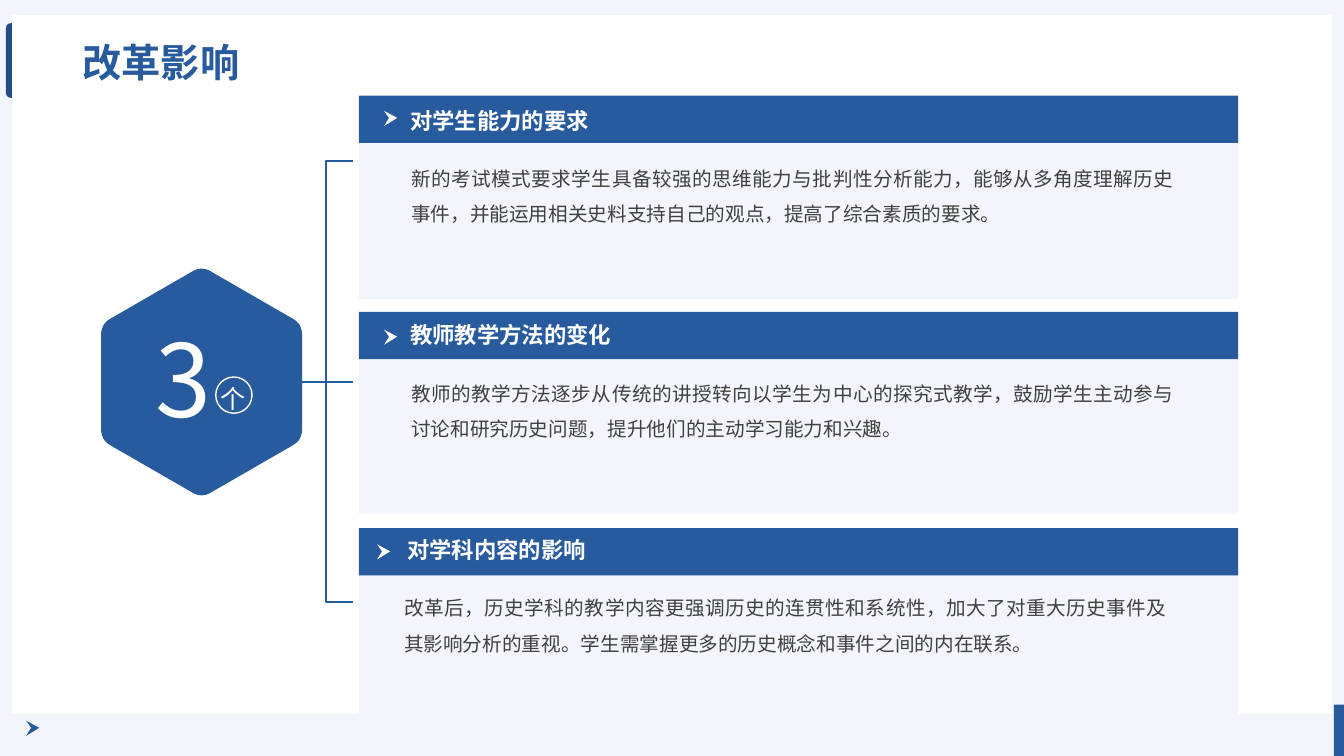
"""Build the reform impact slide: a hexagon bracketed to three text cards."""
from math import cos, pi, sin

from lxml import etree
from pptx import Presentation
from pptx import util as u
from pptx.dml.color import RGBColor
from pptx.enum import shapes, text
from pptx.oxml.ns import qn

COLORS = {"blue": "285B9E", "navy": "224C84", "pale": "F2F5FB", "white": "FFFFFF", "grey": "404040"}
RGB = {name: RGBColor.from_string(value) for name, value in COLORS.items()}
FONT = "Noto Sans CJK SC"
KIND = shapes.MSO_SHAPE
ALIGN = text.PP_ALIGN

prs = Presentation()
prs.slide_width, prs.slide_height = u.Inches(13.33), u.Inches(7.5)
s = prs.slides.add_slide(prs.slide_layouts[5])
s.background.fill.solid()
s.background.fill.fore_color.rgb = RGB["pale"]


def add_shape(shape, fill=None, line=None, width=1):
    """Add a preset (kind, left, top, width, height) or an outline of points."""
    if isinstance(shape, tuple):
        sp = s.shapes.add_shape(shape[0], *[u.Inches(v) for v in shape[1:]])
    else:
        points = [(x * 1000, y * 1000) for x, y in shape]
        builder = s.shapes.build_freeform(*points[0], scale=914.4)
        builder.add_line_segments(points[1:], close=True)
        sp = builder.convert_to_shape()
    sp.shadow.inherit = False
    if fill:
        sp.fill.solid()
        sp.fill.fore_color.rgb = RGB[fill]
    else:
        sp.fill.background()
    if line:
        sp.line.color.rgb = RGB[line]
        sp.line.width = u.Pt(width)
    else:
        sp.line.fill.background()
    return sp


def add_text(words, box, size, color, bold=False, align=ALIGN.LEFT, spacing=None, wrap=True, sp=None):
    """Write words in a new text box, or in the placeholder given as sp."""
    lengths = [u.Inches(v) for v in box]
    sp = sp or s.shapes.add_textbox(*lengths)
    sp.left, sp.top, sp.width, sp.height = lengths
    tf = sp.text_frame
    tf.text = words
    tf.word_wrap = wrap
    tf.auto_size = text.MSO_AUTO_SIZE.NONE
    tf.vertical_anchor = text.MSO_ANCHOR.TOP
    p = tf.paragraphs[0]
    p.alignment = align
    if spacing:
        p.line_spacing = spacing
    font = p.runs[0].font
    font.name, font.size, font.bold = FONT, u.Pt(size), bold
    font.color.rgb = RGB[color]
    etree.SubElement(p.runs[0]._r.get_or_add_rPr(), qn("a:ea"), typeface=FONT)


tab = add_shape((KIND.ROUND_2_SAME_RECTANGLE, -0.21, 0.5, 0.74, 0.2), "navy")
tab.rotation = 270
tab.adjustments[0] = 0.23
add_shape((KIND.RECTANGLE, 13.23, 6.99, 0.1, 0.51), "blue")
add_shape((KIND.RECTANGLE, 0.12, 0.15, 13.09, 6.93), "white")

cx, cy, radius, cut, steps = 2, 3.79, 1.15, 0.09, 8
corners = [(cx + radius * sin(k * pi / 3), cy - radius * cos(k * pi / 3)) for k in range(6)]
outline = []
for k, corner in enumerate(corners):
    before, after = corners[k - 1], corners[(k + 1) % 6]
    for step in range(steps + 1):
        t = step / steps
        outline.append([c + cut * ((1 - t) ** 2 * (b - c) + t ** 2 * (a - c))
                        for c, b, a in zip(corner, before, after)])
add_shape(outline, "blue")
add_text("3", (1.42, 3.09, 0.79, 1.31), 72, "white", align=ALIGN.CENTER, wrap=False)
add_text("个", (2.09, 3.75, 0.45, 0.4), 18, "white", align=ALIGN.CENTER, wrap=False)
add_shape((KIND.OVAL, 2.14, 3.74, 0.36, 0.36), line="white")

stem = s.shapes.add_connector(shapes.MSO_CONNECTOR.STRAIGHT, *[u.Inches(v) for v in (2.99, cy, 3.5, cy)])
stem.line.color.rgb = RGB["blue"]
stem.line.width = u.Pt(1.5)
etree.SubElement(stem._element.spPr, qn("a:effectLst"))
bracket = add_shape((KIND.LEFT_BRACKET, 3.23, 1.6, 0.27, 4.37), line="blue", width=1.5)
bracket.adjustments[0] = 0

add_text("改革影响", (0.72, 0.33, 11.84, 0.57), 28, "blue", bold=True, sp=s.shapes.title)
title = s.shapes.title.element
title.getparent().append(title)

left, top, width, band, pitch, text_pitch = 3.56, 0.95, 8.72, 0.47, 2.145, 2.13
cards = [
    ("对学生能力的要求", 1.55, 3.97, 3.98, (3.81, 1.17),
     "新的考试模式要求学生具备较强的思维能力与批判性分析能力，能够从多角度理解历史事件，并能运用相关史料支持自己的观点，提高了综合素质的要求。"),
    ("教师教学方法的变化", 1.53, 3.97, 3.98, (3.81, 3.34),
     "教师的教学方法逐步从传统的讲授转向以学生为中心的探究式教学，鼓励学生主动参与讨论和研究历史问题，提升他们的主动学习能力和兴趣。"),
    ("对学科内容的影响", 1.4, 3.94, 3.91, (3.74, 5.47),
     "改革后，历史学科的教学内容更强调历史的连贯性和系统性，加大了对重大历史事件及其影响分析的重视。学生需掌握更多的历史概念和事件之间的内在联系。"),
]
marks = [((0.26, 7.22), "blue")]
for i, (heading, height, heading_left, body_left, mark, body) in enumerate(cards):
    y = top + i * pitch
    add_shape((KIND.RECTANGLE, left, y, width, band), "blue")
    add_shape((KIND.RECTANGLE, left, y + band, width, height), "pale")
    add_text(heading, (heading_left, 1.01 + i * text_pitch, 8.31, 0.37), 16, "white", bold=True)
    add_text(body, (body_left, 1.49 + i * text_pitch, 7.76, 0.77), 14, "grey",
             align=ALIGN.JUSTIFY, spacing=1.5)
    marks.append((mark, "white"))

for (x, y), color in marks:
    add_shape([(x, y - 0.07), (x + 0.13, y), (x, y + 0.08), (x + 0.05, y)], color)

prs.save("out.pptx")
